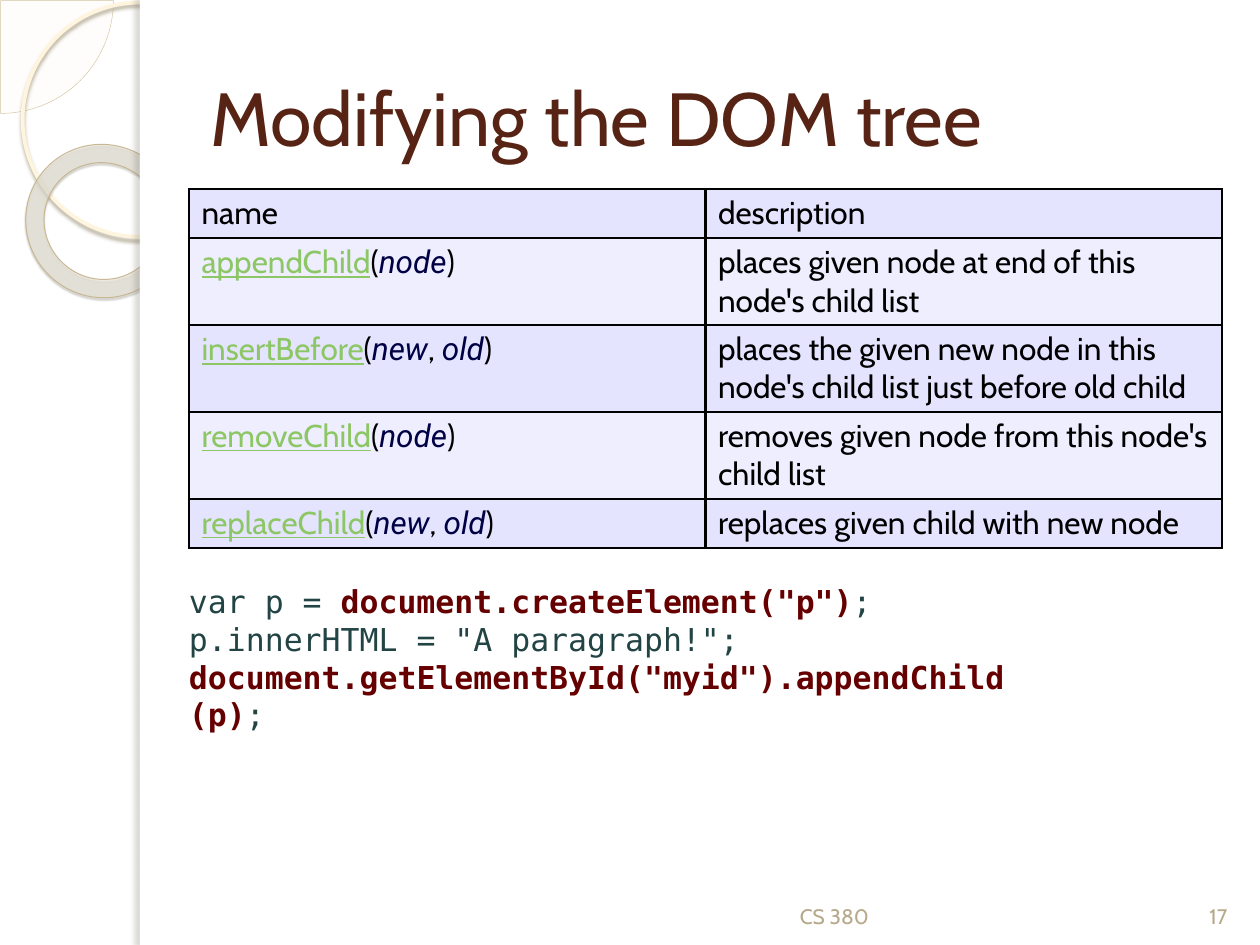
from lxml import etree
from pptx import Presentation
from pptx.dml.color import RGBColor
from pptx.enum.shapes import MSO_SHAPE
from pptx.enum.text import MSO_ANCHOR, MSO_AUTO_SIZE, PP_ALIGN
from pptx.oxml.ns import qn
from pptx.util import Inches, Pt

PIE, OVAL, DONUT, RECTANGLE = MSO_SHAPE.PIE, MSO_SHAPE.OVAL, MSO_SHAPE.DONUT, MSO_SHAPE.RECTANGLE
TOP, MIDDLE, BOTTOM = MSO_ANCHOR.TOP, MSO_ANCHOR.MIDDLE, MSO_ANCHOR.BOTTOM
LEFT, CENTER = PP_ALIGN.LEFT, PP_ALIGN.CENTER
NO_FIT = MSO_AUTO_SIZE.NONE
TITLE_ONLY = 5

COLORS = {
    "white": "FFFFFF", "black": "000000", "title": "572314", "footer": "B6A98A",
    "link": "8DC765", "argument": "000044", "code": "224444", "call": "660000",
    "band_dark": "E4E4FF", "band_light": "EEEEFF",
    "pie": "FEFAF4", "pie_line": "D3C39F", "ring_line": "FFF5DE", "ring_shadow": "B0A68F",
    "donut": "E6E2D6", "donut_line": "C7B893", "donut_shadow": "5A5444", "edge_shadow": "736F63",
}
STYLES = {
    "title": {"size": 43, "color": "title"},
    "cell": {"color": "black"},
    "link": {"color": "link", "underline": True},
    "argument": {"font": "Roboto", "color": "argument", "italic": True},
    "code": {"font": "DejaVu Sans Mono", "color": "code"},
    "call": {"font": "DejaVu Sans Mono", "color": "call", "bold": True},
    "footer": {"size": 12, "color": "footer"},
}
METHODS = [
    ("appendChild", ["node"], "places given node at end of this node's child list", 0.69),
    ("insertBefore", ["new", "old"],
     "places the given new node in this node's child list just before old child", 0.69),
    ("removeChild", ["node"], "removes given node from this node's child list", 0.69),
    ("replaceChild", ["new", "old"], "replaces given child with new node", 0.39),
]
CODE = [
    [("var p = ", "code"), ('document.createElement("p")', "call"), (";", "code")],
    [('p.innerHTML = "A paragraph!";', "code")],
    [('document.getElementById("myid").appendChild(p)', "call"), (";", "code")],
]


def rgb(name):
    """Return the named colour."""
    return RGBColor.from_string(COLORS[name])


def add_span(para, text, style):
    """Add one run in a named text style."""
    look = STYLES[style]
    span = para.add_run()
    span.text = text
    font = span.font
    font.name = look.get("font", "Cabin")
    font.size = Pt(look.get("size", 18))
    font.color.rgb = rgb(look["color"])
    font.bold = look.get("bold", False)
    font.italic = look.get("italic", False)
    font.underline = look.get("underline", False)


def fill_frame(frame, lines, anchor, align=LEFT):
    """Write paragraphs of styled runs into a text frame."""
    frame.word_wrap = True
    frame.auto_size = NO_FIT
    frame.vertical_anchor = anchor
    for index, line in enumerate(lines):
        para = frame.add_paragraph() if index else frame.paragraphs[0]
        para.alignment = align
        for text, style in line:
            add_span(para, text, style)


def add_text(page, place, lines, anchor, align=LEFT):
    """Add a wrapping text box and return its frame."""
    box = page.shapes.add_textbox(*map(Inches, place))
    fill_frame(box.text_frame, lines, anchor, align)
    return box.text_frame


def set_alpha(parent, percent):
    """Make the colour inside an element partly transparent."""
    color = next(parent.iter(qn("a:srgbClr")))
    etree.SubElement(color, qn("a:alpha"), val=str(percent * 1000))


def add_shadow(shape, color, percent, blur, distance, angle):
    """Give a shape an outer shadow."""
    effects = shape._element.spPr.find(qn("a:effectLst"))
    shadow = etree.SubElement(effects, qn("a:outerShdw"), blurRad=str(Pt(blur)),
                              dist=str(Pt(distance)), dir=str(angle * 60000),
                              algn="ctr", rotWithShape="0")
    etree.SubElement(shadow, qn("a:srgbClr"), val=COLORS[color])
    set_alpha(shadow, percent)


def add_ornament(page, kind, place, fill=None, alpha=None, line=None, shadow=None):
    """Add a decorative preset shape."""
    shape = page.shapes.add_shape(kind, *map(Inches, place))
    shape.shadow.inherit = False
    if fill:
        shape.fill.solid()
        shape.fill.fore_color.rgb = rgb(fill)
        if alpha:
            set_alpha(shape._element.spPr, alpha)
    else:
        shape.fill.background()
    if line:
        shape.line.color.rgb = rgb(line[0])
        shape.line.width = Pt(line[1])
    else:
        shape.line.fill.background()
    if shadow:
        add_shadow(shape, *shadow)
    return shape


def add_side_band(page):
    """Draw the circles at the left and the white page area."""
    pie = add_ornament(page, PIE, (-0.89, -0.89, 1.79, 1.79), "pie", 33, ("pie_line", 0.25))
    pie.adjustments[0], pie.adjustments[1] = 0, 54
    add_ornament(page, OVAL, (0.18, 0.02, 1.86, 1.86), line=("ring_line", 2.15),
                 shadow=("ring_shadow", 85, 2, 2, 90))
    donut = add_ornament(page, DONUT, (0.2, 1.15, 1.23, 1.21), "donut", 60,
                         ("donut_line", 0.58), ("donut_shadow", 35, 1, 1.2, 75))
    donut.adjustments[0] = 0.12
    donut.rotation = 38.6
    add_ornament(page, RECTANGLE, (1.11, 0, 8.89, 7.5), "white")
    add_ornament(page, RECTANGLE, (1.11, 0, 0.08, 7.5), "white",
                 shadow=("edge_shadow", 25, 3, 3, 180))


def add_title(page, text):
    """Place the title above the page area."""
    title = page.shapes.title
    title.left, title.top, title.width, title.height = map(Inches, (1.57, 0.3, 8.2, 1.25))
    fill_frame(title.text_frame, [[(text, "title")]], MIDDLE)
    page.shapes._spTree.append(title._element)


def signature(name, arguments):
    """Return the runs of a method signature."""
    spans = [(name, "link"), ("(", "cell")]
    for index, argument in enumerate(arguments):
        if index:
            spans.append((", ", "cell"))
        spans.append((argument, "argument"))
    return spans + [(")", "cell")]


def fill_cell(cell, spans, band):
    """Write a cell with its borders and fill."""
    for side in ("a:lnL", "a:lnR", "a:lnT", "a:lnB"):
        border = etree.SubElement(cell._tc.get_or_add_tcPr(), qn(side), w=str(Pt(1.5)))
        solid = etree.SubElement(border, qn("a:solidFill"))
        etree.SubElement(solid, qn("a:srgbClr"), val=COLORS["black"])
    cell.fill.solid()
    cell.fill.fore_color.rgb = rgb(band)
    cell.margin_top = cell.margin_bottom = Inches(0.04)
    for text, style in spans:
        add_span(cell.text_frame.paragraphs[0], text, style)


def add_method_table(page):
    """Add the table of tree methods."""
    rows = [([("name", "cell")], "description", 0.39)]
    rows += [(signature(name, arguments), text, height)
             for name, arguments, text, height in METHODS]
    frame = page.shapes.add_table(len(rows), 2, *map(Inches, (1.5, 1.5, 8.2, 2.85)))
    table = frame.table
    table.first_row = table.horz_banding = False
    for index, (spans, text, height) in enumerate(rows):
        table.rows[index].height = Inches(height)
        band = "band_light" if index % 2 else "band_dark"
        fill_cell(table.cell(index, 0), spans, band)
        fill_cell(table.cell(index, 1), [(text, "cell")], band)


def main():
    """Build the slide and save it."""
    deck = Presentation()
    deck.slide_width, deck.slide_height = Inches(10), Inches(7.5)
    page = deck.slides.add_slide(deck.slide_layouts[TITLE_ONLY])
    add_side_band(page)
    add_title(page, "Modifying the DOM tree")
    add_method_table(page)
    add_text(page, (6.25, 6.9, 3.17, 0.52), [[("CS 380", "footer")]], BOTTOM)
    add_text(page, (9.42, 6.9, 0.5, 0.52), [[("17", "footer")]], BOTTOM, CENTER)
    code = add_text(page, (1.5, 4.57, 6.54, 1.43), CODE, TOP)
    code.margin_left = code.margin_right = 0
    deck.save("out.pptx")


if __name__ == "__main__":
    main()
